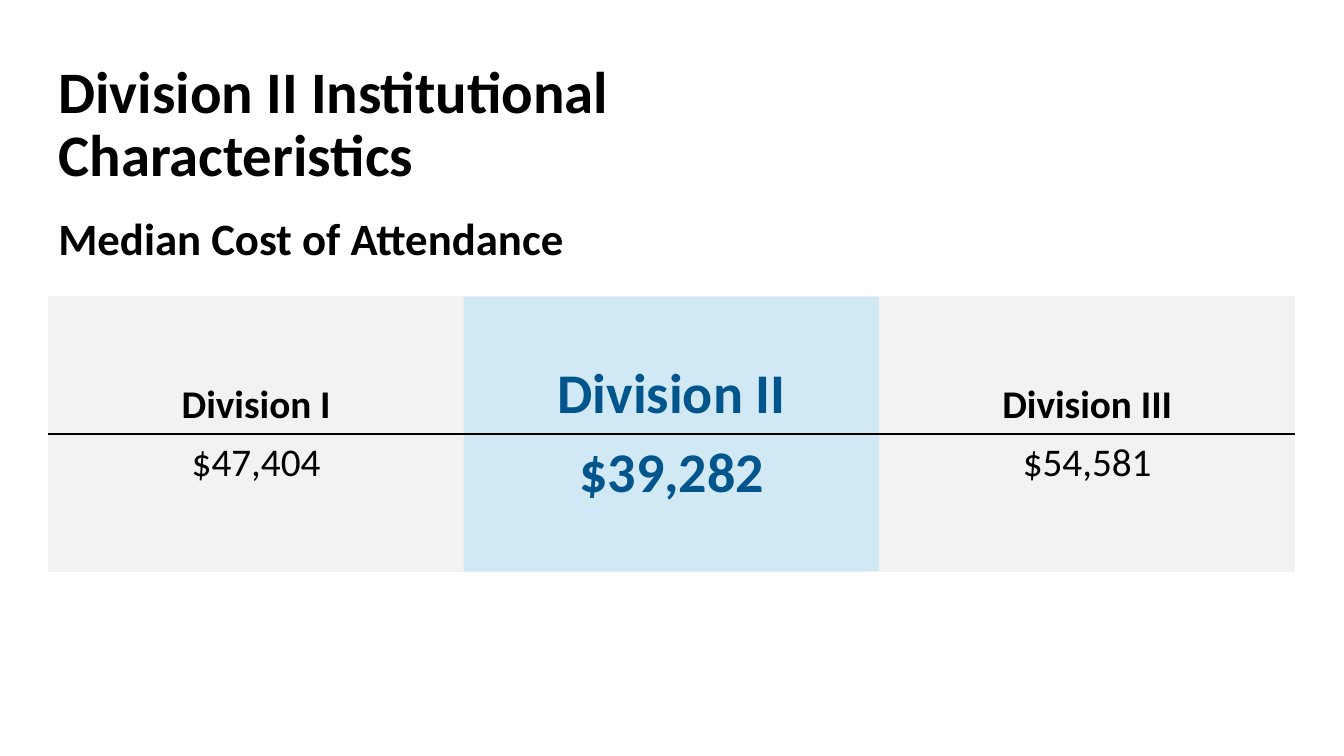
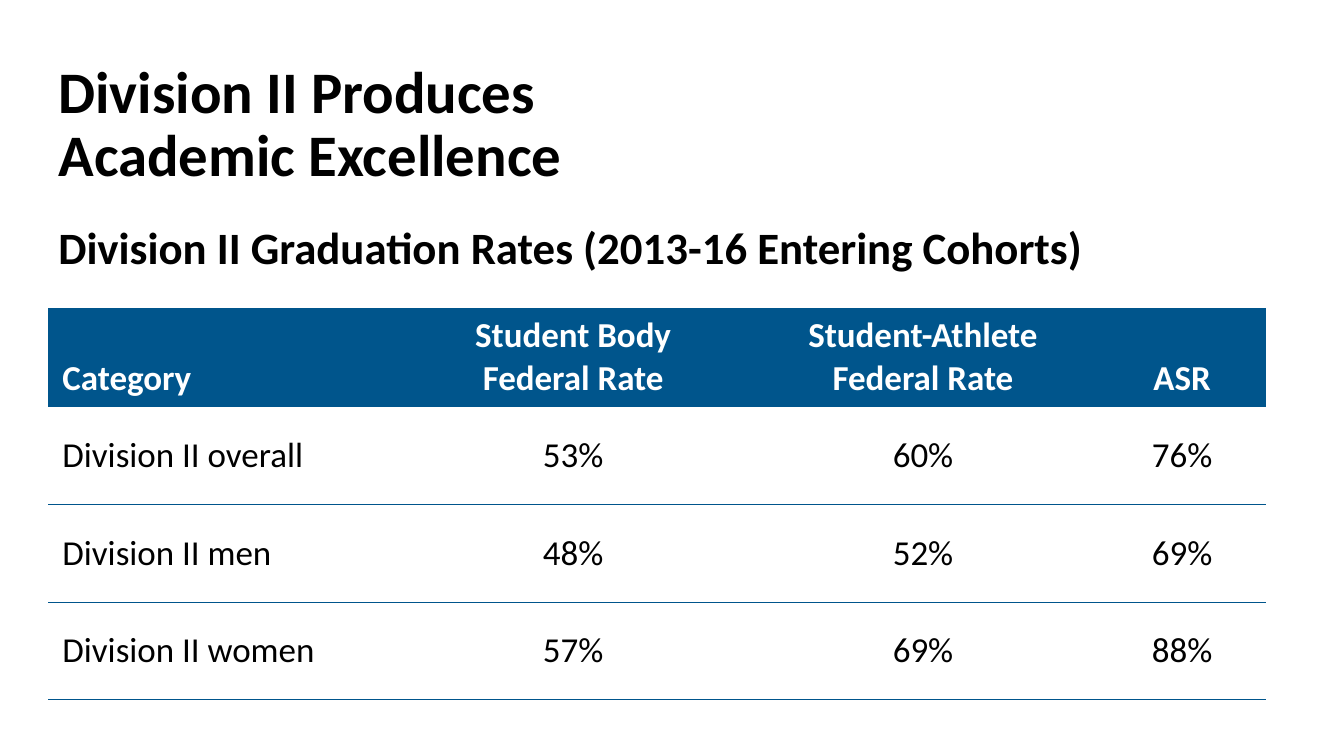
from dataclasses import dataclass

import pptx
import pptx.dml.color
import pptx.enum.text
import pptx.oxml
import pptx.oxml.ns
import pptx.util

ALIGN = pptx.enum.text.PP_ALIGN
ANCHOR = pptx.enum.text.MSO_ANCHOR
PLAIN_TABLE = "{2D5ABB26-0587-4C30-8999-92F81FD0307C}"


@dataclass(frozen=True)
class Theme:
    font: str = "Calibri"
    black: str = "000000"
    white: str = "FFFFFF"
    blue: str = "00558C"
    sky: str = "8DC8E8"
    grey: str = "F2F2F2"
    title_size: int = 42
    subtitle_size: int = 32
    highlight_size: int = 40
    cost_size: int = 28
    rate_size: int = 25
    left: float = 3.6


class Slides:
    def __init__(self, theme):
        self.theme = theme
        self.deck = pptx.Presentation()
        self.deck.slide_width = pptx.util.Inches(13.33)
        self.deck.slide_height = pptx.util.Inches(7.5)
        self.page = None

    def across(self, percent):
        return round(self.deck.slide_width * percent / 100)

    def down(self, percent):
        return round(self.deck.slide_height * percent / 100)

    def style(self, frame, size, color, bold=False, align=ALIGN.LEFT, spacing=None):
        for para in frame.paragraphs:
            para.alignment = align
            para.line_spacing = spacing
            para.font.name = self.theme.font
            para.font.size = pptx.util.Pt(size)
            para.font.bold = bold
            para.font.color.rgb = pptx.dml.color.RGBColor.from_string(color)

    def heading(self, box, text, size):
        frame = box.text_frame
        frame.text = text
        frame.word_wrap = True
        frame.auto_size = pptx.enum.text.MSO_AUTO_SIZE.NONE
        frame.vertical_anchor = ANCHOR.TOP
        self.style(frame, size, self.theme.black, bold=True, spacing=0.9)

    def add_page(self, title):
        self.page = self.deck.slides.add_slide(self.deck.slide_layouts.get_by_name("Title Only"))
        box = self.page.shapes.title
        box.left, box.top = self.across(self.theme.left), self.down(7.6)
        box.width, box.height = self.across(51), self.down(18.5)
        self.heading(box, title, self.theme.title_size)

    def add_subtitle(self, text, top):
        box = self.page.shapes.add_textbox(
            self.across(self.theme.left), self.down(top), self.across(92), self.down(7))
        self.heading(box, text, self.theme.subtitle_size)

    def add_table(self, rows, top, widths, row_height):
        frame = self.page.shapes.add_table(
            len(rows), len(widths), self.across(self.theme.left), self.down(top),
            self.across(sum(widths)), self.down(row_height * len(rows)))
        for style_id in frame.element.iter(pptx.oxml.ns.qn("a:tableStyleId")):
            style_id.text = PLAIN_TABLE
        table = frame.table
        table.horz_banding = False
        for column, width in zip(table.columns, widths):
            column.width = self.across(width)
        for row, texts in zip(table.rows, rows):
            row.height = self.down(row_height)
            for cell, text in zip(row.cells, texts):
                cell.text_frame.text = text
        return table

    def fill_cell(self, cell, color, opacity=100):
        cell.fill.solid()
        cell.fill.fore_color.rgb = pptx.dml.color.RGBColor.from_string(color)
        if opacity < 100:
            for tone in cell._tc.tcPr.iter(pptx.oxml.ns.qn("a:srgbClr")):
                tone.append(pptx.oxml.parse_xml(
                    f'<a:alpha {pptx.oxml.ns.nsdecls("a")} val="{opacity * 1000}"/>'))

    def underline_cell(self, cell, color, points):
        cell._tc.get_or_add_tcPr().insert(0, pptx.oxml.parse_xml(
            f'<a:lnB {pptx.oxml.ns.nsdecls("a")} w="{pptx.util.Pt(points)}">'
            f'<a:solidFill><a:srgbClr val="{color}"/></a:solidFill></a:lnB>'))

    def add_cost_table(self, rows, top, highlight):
        theme = self.theme
        table = self.add_table(rows, top, [30.92] * 3, 18.2)
        for index, row in enumerate(table.rows):
            header = index == 0
            for column, cell in enumerate(row.cells):
                cell.vertical_anchor = ANCHOR.BOTTOM if header else ANCHOR.TOP
                if column == highlight:
                    self.style(cell.text_frame, theme.highlight_size, theme.blue, True, ALIGN.CENTER)
                    self.fill_cell(cell, theme.sky, opacity=40)
                else:
                    self.style(cell.text_frame, theme.cost_size, theme.black, header, ALIGN.CENTER)
                    self.fill_cell(cell, theme.grey)
                if header:
                    self.underline_cell(cell, theme.black, 1.5)

    def add_rate_table(self, rows, top):
        theme = self.theme
        table = self.add_table(rows, top, [26.03] * 3 + [12.53], 12.9)
        for index, row in enumerate(table.rows):
            header = index == 0
            for column, cell in enumerate(row.cells):
                cell.margin_left = cell.margin_right = pptx.util.Inches(0.14)
                cell.margin_top = cell.margin_bottom = pptx.util.Inches(0.07)
                cell.vertical_anchor = ANCHOR.BOTTOM if header else ANCHOR.MIDDLE
                color = theme.white if header else theme.black
                align = ALIGN.CENTER if column else ALIGN.LEFT
                self.style(cell.text_frame, theme.rate_size, color, header, align)
                if header:
                    self.fill_cell(cell, theme.blue)
                else:
                    self.underline_cell(cell, theme.blue, 1)


def main():
    slides = Slides(Theme())

    slides.add_page("Division II Institutional Characteristics")
    slides.add_subtitle("Median Cost of Attendance", 28)
    slides.add_cost_table([
        ["Division I", "Division II", "Division III"],
        ["$47,404", "$39,282", "$54,581"],
    ], top=39.2, highlight=1)

    slides.add_page("Division II Produces Academic Excellence")
    slides.add_subtitle("Division II Graduation Rates (2013-16 Entering Cohorts)", 29.2)
    slides.add_rate_table([
        ["Category", "Student Body\nFederal Rate", "Student-Athlete\nFederal Rate", "ASR"],
        ["Division II overall", "53%", "60%", "76%"],
        ["Division II men", "48%", "52%", "69%"],
        ["Division II women", "57%", "69%", "88%"],
    ], top=40.7)

    slides.deck.save("out.pptx")


if __name__ == "__main__":
    main()
